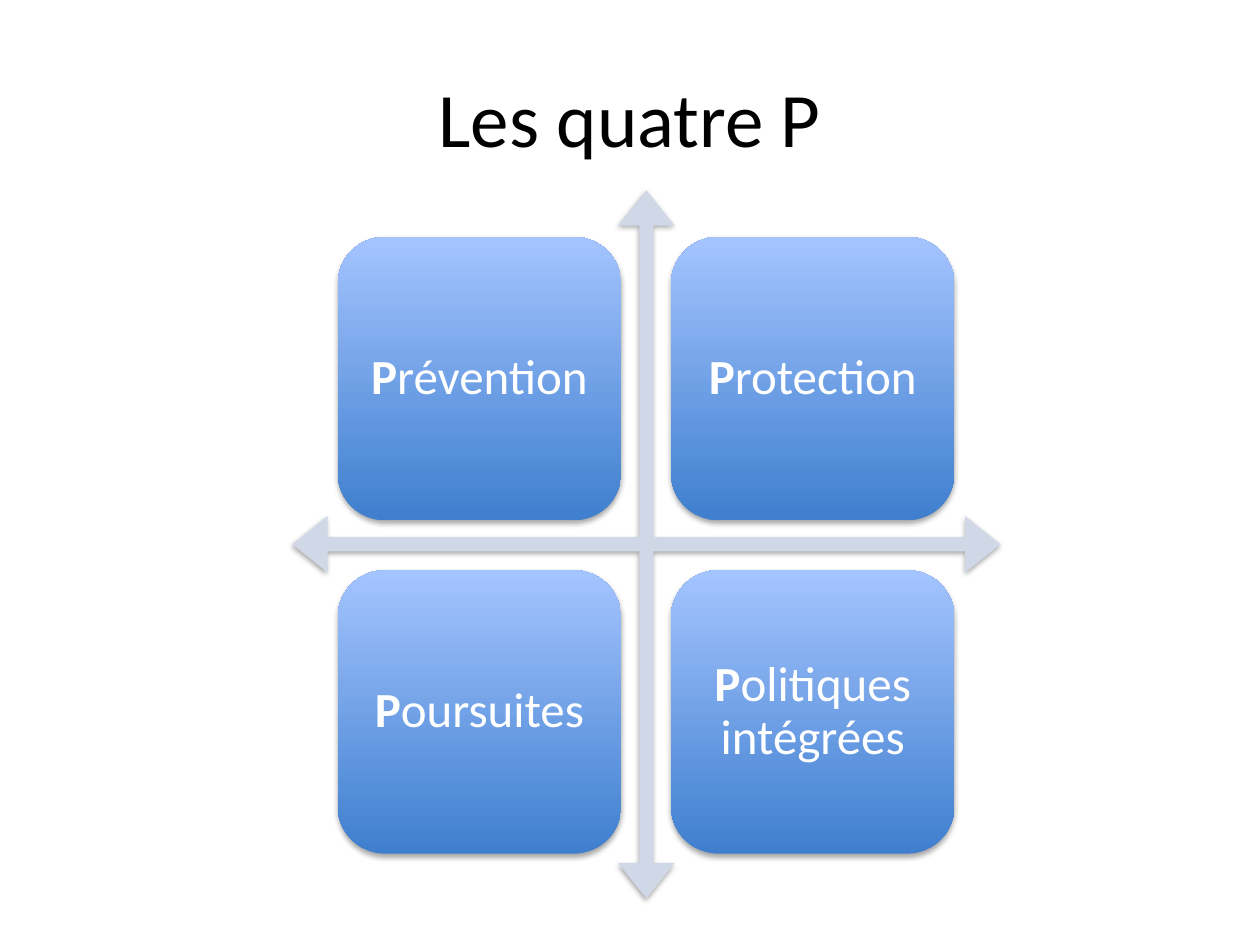
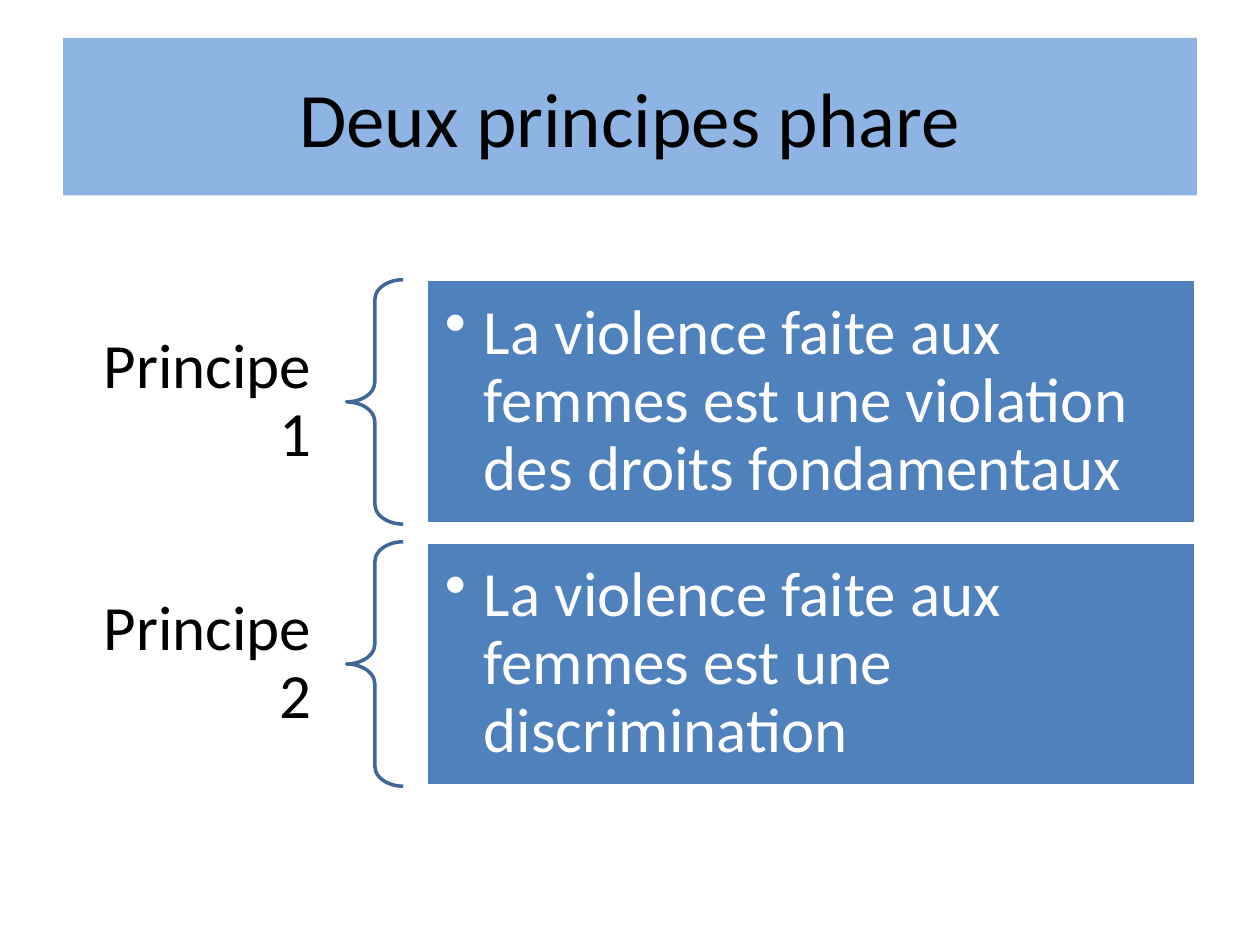
from dataclasses import dataclass

from lxml import etree
from pptx import Presentation
from pptx.dml.color import RGBColor
from pptx.enum.shapes import MSO_SHAPE
from pptx.enum.text import MSO_ANCHOR, PP_ALIGN
from pptx.oxml.ns import qn
from pptx.util import Inches, Pt

LEFT, CENTER, RIGHT = PP_ALIGN.LEFT, PP_ALIGN.CENTER, PP_ALIGN.RIGHT
MIDDLE = MSO_ANCHOR.MIDDLE
ROUNDED, RECT = MSO_SHAPE.ROUNDED_RECTANGLE, MSO_SHAPE.RECTANGLE
QUAD_ARROW, LEFT_BRACE = MSO_SHAPE.QUAD_ARROW, MSO_SHAPE.LEFT_BRACE


@dataclass(frozen=True)
class Theme:
    font: str = "Calibri"
    black: RGBColor = RGBColor(0, 0, 0)
    white: RGBColor = RGBColor(255, 255, 255)
    band: RGBColor = RGBColor(0x8E, 0xB4, 0xE3)
    arrow: RGBColor = RGBColor(0xD0, 0xD8, 0xE8)
    tile_bottom: RGBColor = RGBColor(0x3F, 0x7F, 0xCE)
    tile_top: RGBColor = RGBColor(0xA4, 0xC4, 0xFF)
    box: RGBColor = RGBColor(0x4F, 0x81, 0xBD)
    brace: RGBColor = RGBColor(0x3F, 0x67, 0x97)
    title_size: int = 44
    tile_size: int = 28
    principle_size: int = 36


THEME = Theme()


def write(sp, text, size, color=THEME.black, align=CENTER, inset=(0.1, 0.05),
          spacing=None, bold_first=0, bullet_indent=None):
    """Fill sp with one paragraph; the first bold_first letters are bold."""
    tf = sp.text_frame
    tf.word_wrap = True
    tf.vertical_anchor = MIDDLE
    tf.margin_left = tf.margin_right = Inches(inset[0])
    tf.margin_top = tf.margin_bottom = Inches(inset[1])
    p = tf.paragraphs[0]
    p.alignment = align
    p.line_spacing = spacing
    for part, bold in ((text[:bold_first], True), (text[bold_first:], False)):
        if part:
            r = p.add_run()
            r.text = part
            r.font.name, r.font.size, r.font.bold = THEME.font, Pt(size), bold
            r.font.color.rgb = color
    if bullet_indent:
        pPr = p._p.get_or_add_pPr()
        pPr.set("marL", str(Inches(bullet_indent)))
        pPr.set("indent", str(-Inches(bullet_indent)))
        etree.SubElement(pPr, qn("a:buChar"), char="•")


def add_shape(s, kind, left, top, width, height, fill=None, line=None,
              adjust=(), shadow=False):
    """Add a shape; a tuple as fill gives a gradient from bottom to top."""
    sp = s.shapes.add_shape(kind, Inches(left), Inches(top), Inches(width), Inches(height))
    for i, value in enumerate(adjust):
        sp.adjustments[i] = value
    if fill is None:
        sp.fill.background()
    elif isinstance(fill, RGBColor):
        sp.fill.solid()
        sp.fill.fore_color.rgb = fill
    else:
        sp.fill.gradient()
        sp.fill.gradient_angle = 90
        for stop, color, position in zip(sp.fill.gradient_stops, fill, (0, 1)):
            stop.color.rgb, stop.position = color, position
    if line is None:
        sp.line.fill.background()
    else:
        sp.line.color.rgb, sp.line.width = line, Pt(2)
    sp.shadow.inherit = False
    if shadow:
        effects = sp._element.spPr.find(qn("a:effectLst"))
        outer = etree.SubElement(effects, qn("a:outerShdw"), blurRad=str(Pt(3.1)),
                                 dist=str(Pt(1.8)), dir="5400000", rotWithShape="0")
        color = etree.SubElement(outer, qn("a:srgbClr"), val=str(THEME.black))
        etree.SubElement(color, qn("a:alpha"), val="35000")
    return sp


prs = Presentation()
prs.slide_width, prs.slide_height = Inches(10), Inches(7.5)

slides = []
for title, band in (("Les quatre P", None), ("Deux principes phare", THEME.band)):
    s = prs.slides.add_slide(prs.slide_layouts[5])
    sp = s.shapes.title
    sp.left, sp.top, sp.width, sp.height = map(Inches, (0.5, 0.3, 9, 1.25))
    write(sp, title, THEME.title_size)
    if band:
        sp.fill.solid()
        sp.fill.fore_color.rgb = band
    slides.append(s)
four_p, principles = slides

# Slide 1: four tiles around a cross of arrows
TILE, TILE_PITCH = 2.25, 2.645
add_shape(four_p, QUAD_ARROW, 2.32, 1.51, 5.62, 5.62, fill=THEME.arrow,
          adjust=(0.02, 0.04, 0.05), shadow=True)
for i, word in enumerate(("Prévention", "Protection", "Poursuites", "Politiques intégrées")):
    row, col = divmod(i, 2)
    tile = add_shape(four_p, ROUNDED, 2.68 + col * TILE_PITCH, 1.88 + row * TILE_PITCH,
                     TILE, TILE, fill=(THEME.tile_bottom, THEME.tile_top), shadow=True)
    write(tile, word, THEME.tile_size, color=THEME.white, inset=(0.12, 0.12),
          spacing=0.9, bold_first=1)

# Slide 2: one row per principle, made of label, brace and box
ROW_HEIGHT, ROW_PITCH, LABEL_HEIGHT = 1.94, 2.08, 1.29
for i, statement in enumerate((
        "La violence faite aux femmes est une violation des droits fondamentaux",
        "La violence faite aux femmes est une discrimination")):
    top = 2.22 + i * ROW_PITCH
    label = principles.shapes.add_textbox(
        Inches(0.5), Inches(top + (ROW_HEIGHT - LABEL_HEIGHT) / 2),
        Inches(2.25), Inches(LABEL_HEIGHT))
    write(label, f"Principe {i + 1}", THEME.principle_size, align=RIGHT,
          inset=(0.28, 0.1), spacing=0.9)
    add_shape(principles, LEFT_BRACE, 2.75, top, 0.45, ROW_HEIGHT,
              line=THEME.brace, adjust=(0.35, 0.5))
    box = add_shape(principles, RECT, 3.38, top, 6.11, ROW_HEIGHT,
                    fill=THEME.box, line=THEME.white)
    write(box, statement, THEME.principle_size, color=THEME.white, align=LEFT,
          inset=(0.15, 0.15), spacing=0.9, bullet_indent=0.31)

prs.save("out.pptx")
